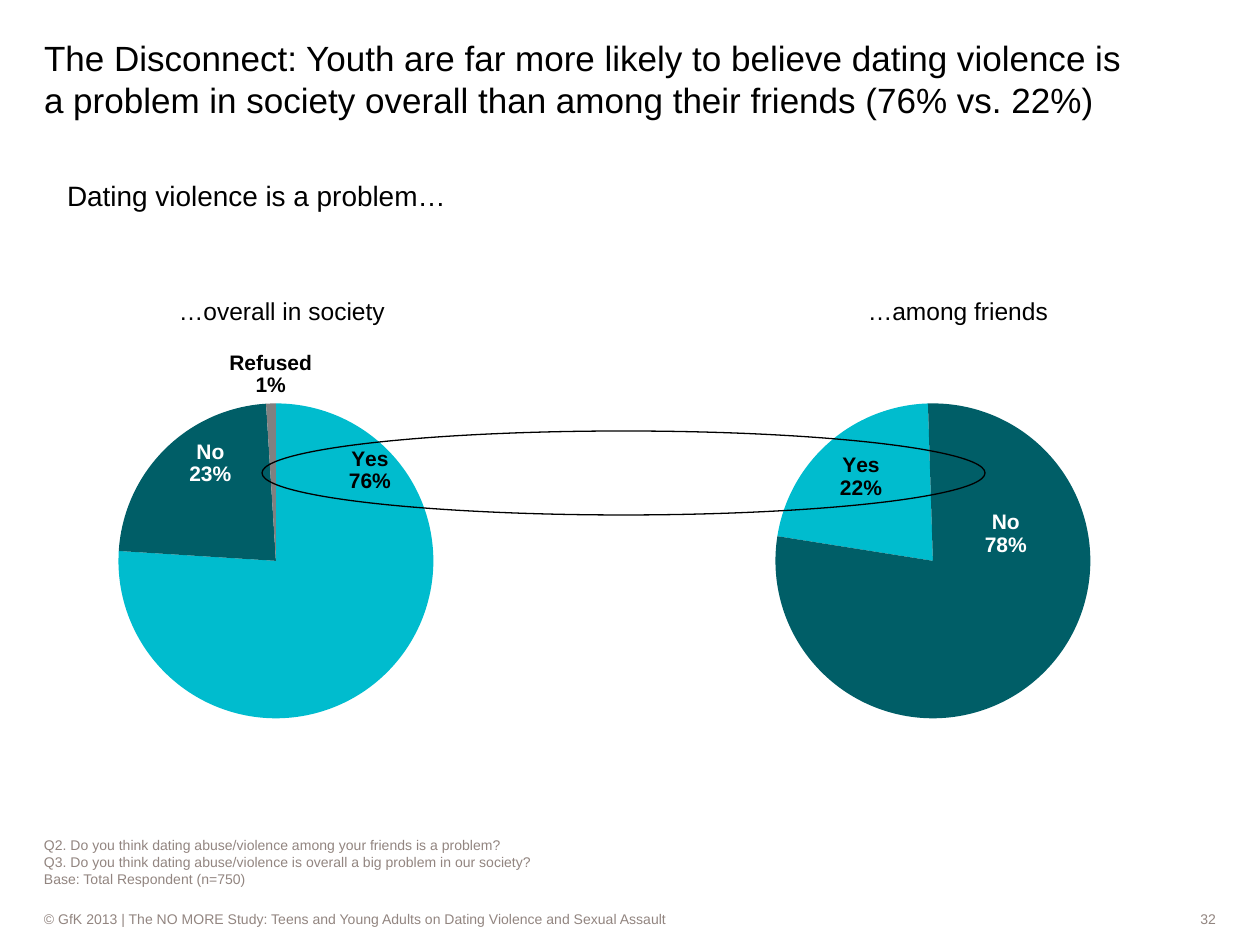
from lxml import etree
from pptx import Presentation
from pptx import util as u
from pptx.chart.data import CategoryChartData
from pptx.dml.color import RGBColor
from pptx.enum import chart as charts, shapes, text
from pptx.oxml.ns import qn

BLACK = RGBColor(0x00, 0x00, 0x00)
WHITE = RGBColor(0xFF, 0xFF, 0xFF)
TAUPE = RGBColor(0x92, 0x85, 0x80)
CYAN = RGBColor(0x00, 0xBC, 0xCE)
TEAL = RGBColor(0x00, 0x5E, 0x67)
GRAY = RGBColor(0x80, 0x80, 0x80)

LEFT, MIDDLE, BOTTOM = 44, text.MSO_ANCHOR.MIDDLE, text.MSO_ANCHOR.BOTTOM
CENTER, RIGHT = text.PP_ALIGN.CENTER, text.PP_ALIGN.RIGHT


def px(length):
    return u.Emu(round(length * 914400 / 126))


def apply(target, **values):
    for name, value in values.items():
        setattr(target, name, value)


def manual_layout(**values):
    layout = etree.Element(qn("c:layout"))
    manual = etree.SubElement(layout, qn("c:manualLayout"))
    for name, value in values.items():
        etree.SubElement(manual, qn(f"c:{name}")).set("val", str(value))
    return layout


class Slide:
    FONT = "Arial"
    PIE = 315
    CHART_WIDTH, CHART_HEIGHT = 550, 500

    def __init__(self, deck):
        self.page = deck.slides.add_slide(deck.slide_layouts[6])

    def text(self, lines, left, top, width, height, size, color=BLACK,
             anchor=text.MSO_ANCHOR.TOP, align=text.PP_ALIGN.LEFT, fill=None):
        box = self.page.shapes.add_textbox(px(left), px(top), px(width), px(height))
        if fill is not None:
            box.fill.solid()
            box.fill.fore_color.rgb = fill
        frame = box.text_frame
        apply(frame, word_wrap=True, vertical_anchor=anchor, margin_left=0,
              margin_right=0, margin_top=0, margin_bottom=0)
        for index, line in enumerate(lines):
            para = frame.paragraphs[0] if index == 0 else frame.add_paragraph()
            para.alignment = align
            span = para.add_run()
            span.text = line
            apply(span.font, name=self.FONT, size=u.Pt(size))
            span.font.color.rgb = color

    def pie(self, center_x, center_y, slices, start=0):
        """Each slice is (name, value, fill, label colour, label shift from its middle)."""
        width, height, size = self.CHART_WIDTH, self.CHART_HEIGHT, self.PIE
        data = CategoryChartData(number_format="0%")
        data.categories = [name for name, *_ in slices]
        data.add_series("Series 1", [value for _, value, *_ in slices])
        chart = self.page.shapes.add_chart(
            charts.XL_CHART_TYPE.PIE, px(center_x - width / 2), px(center_y - height / 2),
            px(width), px(height), data).chart
        apply(chart, has_legend=False, has_title=False)
        apply(chart.font, name=self.FONT, size=u.Pt(18))
        chart.font.color.rgb = BLACK
        plot = chart.plots[0]
        plot.vary_by_categories = True
        series = plot.series[0]
        for index, (_, _, fill, color, shift) in enumerate(slices):
            point = series.points[index]
            point.format.fill.solid()
            point.format.fill.fore_color.rgb = fill
            label = point.data_label
            apply(label.font, name=self.FONT, size=u.Pt(12), bold=True)
            label.font.color.rgb = color
            label.position = charts.XL_LABEL_POSITION.CENTER
            self.show_name(series, index, shift)
        for leader in series._element.iter(qn("c:showLeaderLines")):
            leader.set("val", "0")
        self.place_pie(chart, plot, start, size / width, size / height)

    def show_name(self, series, index, shift):
        """Show the category over the value and move the label by shift."""
        label = series._element.findall(".//" + qn("c:dLbl"))[index]
        label.find(qn("c:showCatName")).set("val", "1")
        etree.SubElement(label, qn("c:separator")).text = "\n"
        label.insert(1, etree.Element(qn("c:numFmt"), formatCode="0%", sourceLinked="0"))
        label.insert(1, manual_layout(x=round(shift[0] / self.CHART_WIDTH, 3),
                                      y=round(shift[1] / self.CHART_HEIGHT, 3)))

    def place_pie(self, chart, plot, start, wide, high):
        area = chart._chartSpace.find(".//" + qn("c:plotArea"))
        for old in area.findall(qn("c:layout")):
            area.remove(old)
        area.insert(0, manual_layout(
            layoutTarget="inner", xMode="edge", yMode="edge",
            x=(1 - wide) / 2, y=(1 - high) / 2, w=wide, h=high))
        group = plot._element
        for old in group.findall(qn("c:firstSliceAng")):
            group.remove(old)
        etree.SubElement(group, qn("c:firstSliceAng")).set("val", str(start))

    def ring(self, left, top, width, height):
        oval = self.page.shapes.add_shape(shapes.MSO_SHAPE.OVAL, px(left), px(top),
                                          px(width), px(height))
        oval.shadow.inherit = False
        oval.fill.background()
        oval.line.color.rgb = BLACK
        oval.line.width = u.Pt(0.75)


def main():
    deck = Presentation()
    apply(deck, slide_width=px(1260), slide_height=px(945))
    slide = Slide(deck)

    footer = dict(top=909, height=20, size=8, color=TAUPE, anchor=MIDDLE, fill=WHITE)
    slide.text(["© GfK 2013 | The NO MORE Study: Teens and Young Adults on Dating Violence "
                "and Sexual Assault"], left=LEFT, width=973, **footer)
    slide.text(["32"], left=1037, width=179, align=RIGHT, **footer)
    slide.text(["Q2. Do you think dating abuse/violence among your friends is a problem?",
                "Q3. Do you think dating abuse/violence is overall a big problem in our society?",
                "Base: Total Respondent (n=750)"],
               LEFT, 837, 1171, 50, 8, TAUPE, BOTTOM)
    slide.text(["The Disconnect: Youth are far more likely to believe dating violence is a "
                "problem in society overall than among their friends (76% vs. 22%)"],
               LEFT, 32, 1079, 89, 20, anchor=BOTTOM)

    slide.pie(933, 561, [("Yes", 0.22, CYAN, BLACK, (-20, -25)),
                         ("No", 0.78, TEAL, WHITE, (21, -86))], start=279)
    slide.pie(276, 561, [("Yes", 0.76, CYAN, BLACK, (40, -148)),
                         ("No", 0.23, TEAL, WHITE, (-10, -42)),
                         ("Refused", 0.01, GRAY, BLACK, (-3, -108))])

    for heading, left in (("…among friends", 770), ("…overall in society", 94)):
        slide.text([heading], left, 289, 376, 44, 14, anchor=MIDDLE, align=CENTER)
    slide.text(["Dating violence is a problem…"], 67, 179, 459, 63, 16)
    slide.ring(262, 431, 723, 84)
    deck.save("out.pptx")


if __name__ == "__main__":
    main()
